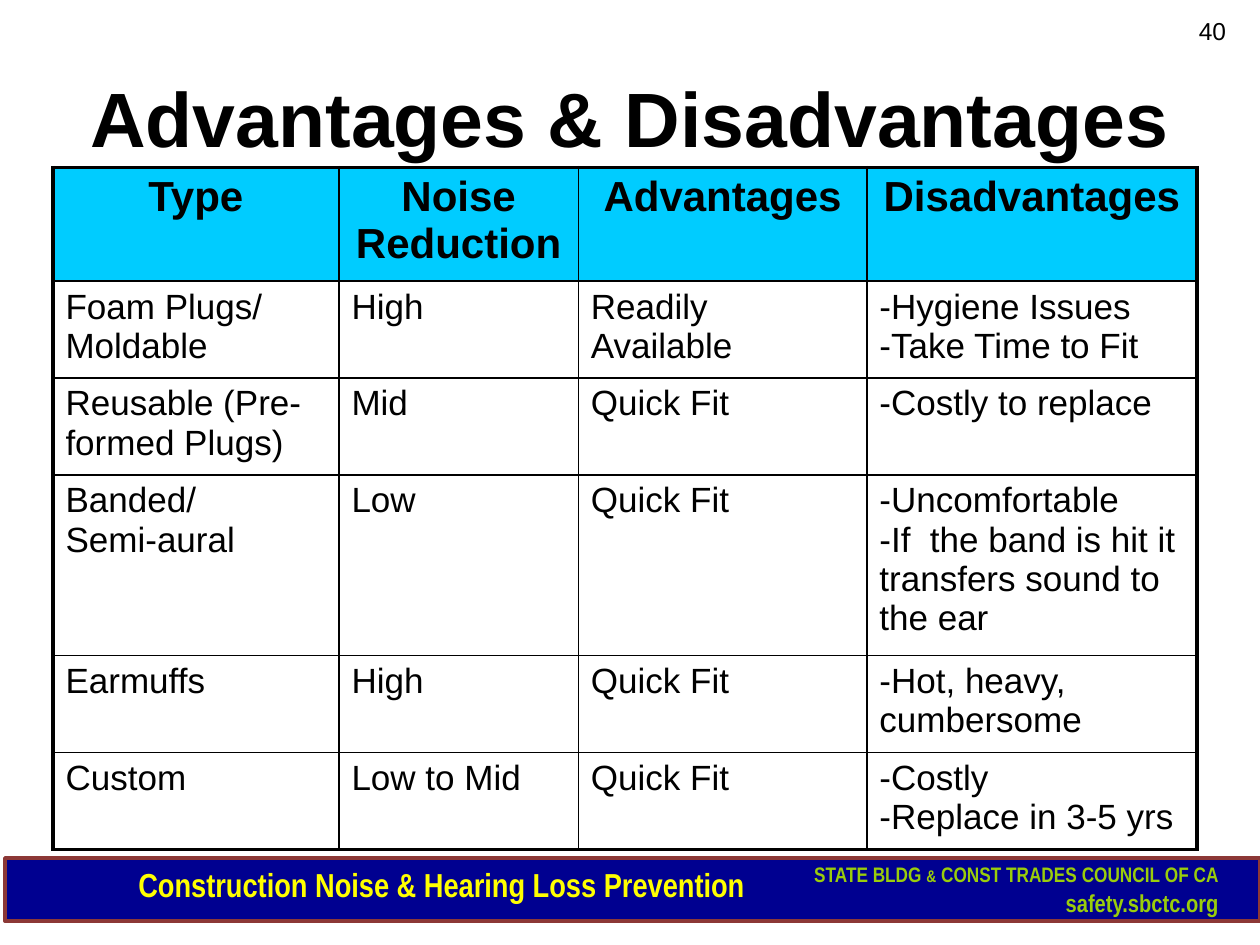
from dataclasses import dataclass

import pptx
import pptx.dml.color
import pptx.enum.shapes
import pptx.enum.text
import pptx.oxml
import pptx.oxml.ns
import pptx.util
from pptx.util import Inches

ALIGN = pptx.enum.text.PP_ALIGN
ANCHOR = pptx.enum.text.MSO_ANCHOR


@dataclass(frozen=True)
class Theme:
    ink: str = "000000"
    header_fill: str = "00CCFF"
    band_fill: str = "000090"
    band_line: str = "8C3836"
    course: str = "FFFF00"
    council: str = "9ACD0B"
    body_font: str = "Arial"
    footer_font: str = "Arial Narrow"
    title_size: int = 44
    header_size: int = 24
    cell_size: int = 20
    course_size: int = 19
    council_size: int = 15
    small_size: int = 14
    ampersand_size: int = 12
    outer_border: float = 2.25
    inner_border: float = 1


THEME = Theme()

HEADERS = ["Type", "Noise Reduction", "Advantages", "Disadvantages"]
PROTECTORS = [
    ["Foam Plugs/ Moldable", "High", "Readily Available",
     "-Hygiene Issues\n-Take Time to Fit"],
    ["Reusable (Pre-formed Plugs)", "Mid", "Quick Fit", "-Costly to replace"],
    ["Banded/\nSemi-aural", "Low", "Quick Fit",
     "-Uncomfortable\n-If  the band is hit it transfers sound to the ear"],
    ["Earmuffs", "High", "Quick Fit", "-Hot, heavy, cumbersome"],
    ["Custom", "Low to Mid", "Quick Fit", "-Costly\n-Replace in 3-5 yrs"],
]
COLUMN_WIDTHS = [2.27, 1.9, 2.29, 2.62]
ROW_HEIGHTS = [0.9, 0.77, 0.77, 1.43, 0.77, 0.77]


def rgb(color):
    return pptx.dml.color.RGBColor.from_string(color)


def add_run(paragraph, text, size, color=THEME.ink, font=THEME.body_font,
            bold=False, small_caps=False):
    run = paragraph.add_run()
    run.text = text
    run.font.size = pptx.util.Pt(size)
    run.font.name = font
    run.font.bold = bold
    run.font.color.rgb = rgb(color)
    if small_caps:
        run.font._element.set("cap", "small")


def add_text_frame(slide, box, anchor=ANCHOR.TOP):
    frame = slide.shapes.add_textbox(*map(Inches, box)).text_frame
    frame.word_wrap = True
    frame.vertical_anchor = anchor
    return frame


def add_footer(slide, box):
    left, top, width, height = box
    band = slide.shapes.add_shape(
        pptx.enum.shapes.MSO_SHAPE.RECTANGLE, *map(Inches, box))
    band.shadow.inherit = False
    band.fill.solid()
    band.fill.fore_color.rgb = rgb(THEME.band_fill)
    band.line.color.rgb = rgb(THEME.band_line)
    band.line.width = pptx.util.Pt(2)

    # Course name
    course = add_text_frame(slide, (left + 0.96, top, 8.88, 0.42)).paragraphs[0]
    add_run(course, "Construction Noise & Hearing Loss Prevention",
            THEME.course_size, THEME.course, THEME.footer_font, bold=True)

    # Council name and web address
    frame = add_text_frame(slide, (left + 6.04, top - 0.06, 3.69, 0.59))
    council, address = frame.paragraphs[0], frame.add_paragraph()
    council.alignment = address.alignment = ALIGN.RIGHT
    style = dict(color=THEME.council, font=THEME.footer_font, bold=True)
    for text, size in [("state bldg ", THEME.council_size),
                       ("&", THEME.ampersand_size),
                       (" const trades council of ca", THEME.council_size)]:
        add_run(council, text, size, small_caps=True, **style)
    add_run(address, "safety.sbctc.org", THEME.small_size, **style)


def add_title(slide, box):
    title = add_text_frame(slide, box, ANCHOR.MIDDLE).paragraphs[0]
    title.alignment = ALIGN.CENTER
    add_run(title, "Advantages & Disadvantages", THEME.title_size, bold=True)


def add_page_number(slide, box):
    number = add_text_frame(slide, box).paragraphs[0]
    number.alignment = ALIGN.RIGHT
    add_run(number, "40", THEME.small_size)


def set_borders(cell, outer_sides):
    properties = cell._tc.get_or_add_tcPr()
    for side in "LRTB":
        points = THEME.outer_border if side in outer_sides else THEME.inner_border
        properties.append(pptx.oxml.parse_xml(
            f'<a:ln{side} {pptx.oxml.ns.nsdecls("a")} w="{pptx.util.Pt(points)}">'
            f'<a:solidFill><a:srgbClr val="{THEME.ink}"/></a:solidFill>'
            f'</a:ln{side}>'))


def fill_cell(cell, text, is_header):
    paragraph = cell.text_frame.paragraphs[0]
    paragraph.alignment = ALIGN.CENTER if is_header else ALIGN.LEFT
    size = THEME.header_size if is_header else THEME.cell_size
    for index, line in enumerate(text.split("\n")):
        if index:
            paragraph.add_line_break()
        add_run(paragraph, line, size, bold=is_header)
    if is_header:
        cell.fill.solid()
        cell.fill.fore_color.rgb = rgb(THEME.header_fill)
    else:
        cell.fill.background()


def add_comparison_table(slide, box):
    rows = [HEADERS] + PROTECTORS
    last_row, last_column = len(rows) - 1, len(HEADERS) - 1
    table = slide.shapes.add_table(
        len(rows), len(HEADERS), *map(Inches, box)).table
    table.horz_banding = False
    for column, width in zip(table.columns, COLUMN_WIDTHS):
        column.width = Inches(width)
    for row, height in zip(table.rows, ROW_HEIGHTS):
        row.height = Inches(height)
    for r, texts in enumerate(rows):
        for c, text in enumerate(texts):
            cell = table.cell(r, c)
            edges = {"L": c == 0, "R": c == last_column,
                     "T": r == 0, "B": r == last_row}
            set_borders(cell, [side for side, outer in edges.items() if outer])
            fill_cell(cell, text, is_header=r == 0)


def main():
    deck = pptx.Presentation()
    deck.slide_width, deck.slide_height = Inches(10), Inches(7.5)
    slide = deck.slides.add_slide(deck.slide_layouts[6])
    add_footer(slide, (0.04, 6.81, 9.96, 0.5))
    add_title(slide, (0.5, 0.3, 9, 1.25))
    add_comparison_table(slide, (0.42, 1.33, 9.08, 5.4))
    add_page_number(slide, (7.5, 0.08, 2.33, 0.52))
    deck.save("out.pptx")


if __name__ == "__main__":
    main()
